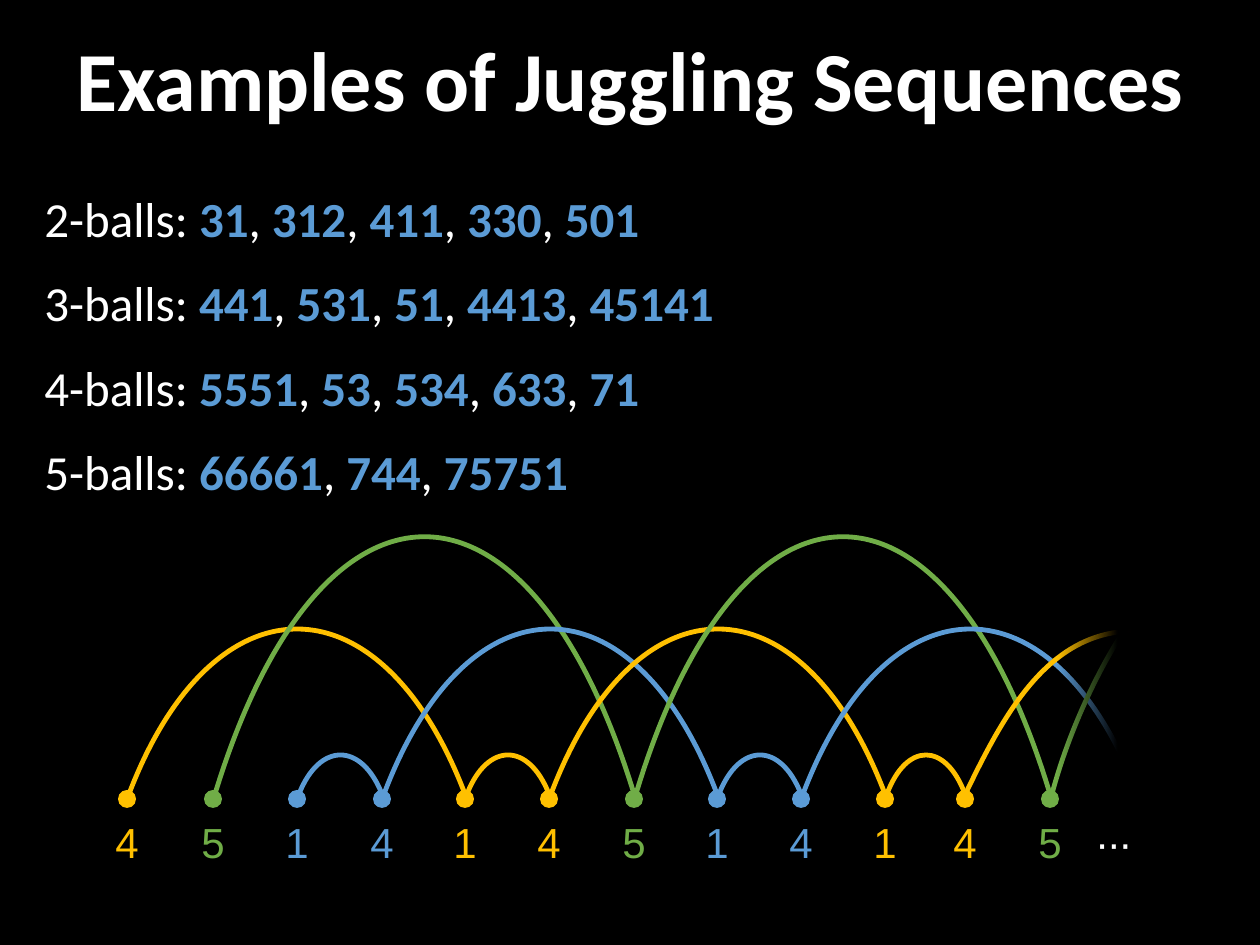
"""Builds a slide of juggling sequences with an arc diagram of the pattern 45141."""
from lxml.etree import SubElement
from pptx import Presentation
from pptx.dml.color import RGBColor
from pptx.enum.shapes import MSO_SHAPE as Shape
from pptx.enum.text import MSO_ANCHOR as Anchor, MSO_AUTO_SIZE as AutoSize, PP_ALIGN as Align
from pptx.oxml.ns import qn
from pptx.util import Pt

SCALE = 914400 / 126
BLACK = RGBColor(0x00, 0x00, 0x00)
WHITE = RGBColor(0xFF, 0xFF, 0xFF)
YELLOW = RGBColor(0xFF, 0xC0, 0x00)
GREEN = RGBColor(0x70, 0xAD, 0x47)
BLUE = RGBColor(0x5B, 0x9B, 0xD5)

EXAMPLES = {
    "2-balls: ": ["31", "312", "411", "330", "501"],
    "3-balls: ": ["441", "531", "51", "4413", "45141"],
    "4-balls: ": ["5551", "53", "534", "633", "71"],
    "5-balls: ": ["66661", "744", "75751"],
}
THROWS = [4, 5, 1, 4, 1, 4, 5, 1, 4, 1, 4, 5]
BEAT_X = [127, 213, 297, 382, 465, 549, 634, 717, 801, 885, 965, 1050, 1138]
CONTROL_Y = {1: 742, 4: 574, 5: 451}
CUT_ARCS = {
    10: [(965, 795), (1004, 714), (1047, 634), (1131, 631)],
    11: [(1052, 794), (1072, 719), (1111, 644), (1140, 609)],
}
ARC_BASE, DOT_Y, DOT_SIZE, LABEL_TOP = 794, 799, 18, 810


def px(*lengths):
    """Turn pixel lengths into EMU."""
    return [round(length * SCALE) for length in lengths]


def set_values(target, values):
    """Set each named attribute on the target."""
    for name, value in values.items():
        setattr(target, name, value)


def add_span(para, text, size, color, font="Calibri", bold=False):
    """Append a formatted run to a paragraph."""
    span = para.add_run()
    span.text = text
    set_values(span.font, {"name": font, "size": Pt(size), "bold": bold})
    span.font.color.rgb = color


def add_title(page, text):
    """Place and format the title."""
    title = page.shapes.title
    set_values(title, dict(zip(("left", "top", "width", "height"), px(32, 21, 1197, 126))))
    title.text_frame.vertical_anchor = Anchor.MIDDLE
    para = title.text_frame.paragraphs[0]
    set_values(para, {"alignment": Align.CENTER, "line_spacing": 0.9})
    add_span(para, text, 48, WHITE, bold=True)


def add_examples(page):
    """List the sequences for each number of balls."""
    frame = page.shapes.add_textbox(*px(32, 189, 1197, 399)).text_frame
    frame.word_wrap = True
    for index, (heading, sequences) in enumerate(EXAMPLES.items()):
        para = frame.add_paragraph() if index else frame.paragraphs[0]
        set_values(para, {"line_spacing": 0.9, "space_after": Pt(18)})
        add_span(para, heading, 28, WHITE)
        for place, sequence in enumerate(sequences):
            if place:
                add_span(para, ", ", 28, WHITE)
            add_span(para, sequence, 28, BLUE, bold=True)


def bezier_point(points, t):
    """Return the point at t on a cubic curve."""
    weights = ((1 - t) ** 3, 3 * t * (1 - t) ** 2, 3 * t * t * (1 - t), t ** 3)
    return tuple(sum(w * p[axis] for w, p in zip(weights, points)) for axis in (0, 1))


def add_curve(page, points, color):
    """Draw a cubic curve in a freeform that bounds it."""
    outline = [px(*bezier_point(points, step / 24)) for step in range(25)]
    builder = page.shapes.build_freeform(*outline[0])
    builder.add_line_segments(outline[1:], close=False)
    curve = builder.convert_to_shape()
    drawing = next(curve.element.iter(qn("a:path")))
    for segment in drawing.findall(qn("a:lnTo")):
        drawing.remove(segment)
    cubic = SubElement(drawing, qn("a:cubicBezTo"))
    for point in points[1:]:
        x, y = px(*point)
        SubElement(cubic, qn("a:pt"), x=str(x - curve.left), y=str(y - curve.top))
    curve.fill.background()
    curve.line.color.rgb = color
    curve.line.width = Pt(2.75)
    curve.shadow.inherit = False


def arc_points(beat):
    """Return the curve of a throw from its beat to its landing."""
    if beat in CUT_ARCS:
        return CUT_ARCS[beat]
    throw = THROWS[beat]
    start, end = BEAT_X[beat] + 2, BEAT_X[beat + throw]
    quarter = (end - start) / 4
    top = CONTROL_Y[throw]
    return [(start, ARC_BASE), (start + quarter, top), (end - quarter, top), (end, ARC_BASE)]


def add_dot(page, x, color):
    """Mark a beat."""
    half = DOT_SIZE / 2
    dot = page.shapes.add_shape(Shape.OVAL, *px(x - half, DOT_Y - half, DOT_SIZE, DOT_SIZE))
    dot.fill.solid()
    dot.fill.fore_color.rgb = color
    dot.line.fill.background()
    dot.shadow.inherit = False


def add_label(page, x, text, color, width=49):
    """Write a label centred under a point."""
    frame = page.shapes.add_textbox(*px(x - width / 2, LABEL_TOP, width, 63)).text_frame
    set_values(frame, {"word_wrap": False, "auto_size": AutoSize.SHAPE_TO_FIT_TEXT})
    para = frame.paragraphs[0]
    para.alignment = Align.CENTER
    add_span(para, text, 24, color, font="Arial")


def add_fade(page):
    """Fade the cut arcs into the background."""
    fade = page.shapes.add_shape(Shape.RECTANGLE, *px(1058, 501, 251, 318))
    fade.fill.gradient()
    fade.fill.gradient_angle = 0
    for stop, position in zip(fade.fill.gradient_stops, (0, 0.24)):
        stop.position = position
        stop.color.rgb = BLACK
    first_color = next(fade.element.iter(qn("a:srgbClr")))
    SubElement(first_color, qn("a:alpha"), val="0")
    fade.line.fill.background()
    fade.shadow.inherit = False


def ball_colors():
    """Follow each ball from throw to throw to colour the beats."""
    colors = {0: YELLOW, 1: GREEN, 2: BLUE}
    for beat, throw in enumerate(THROWS):
        colors[beat + throw] = colors[beat]
    return colors


def add_diagram(page):
    """Draw the arcs, beats and throw numbers."""
    colors = ball_colors()
    for beat in range(len(THROWS)):
        add_curve(page, arc_points(beat), colors[beat])
    for beat in range(len(THROWS)):
        add_dot(page, BEAT_X[beat], colors[beat])
    add_fade(page)
    for beat, throw in enumerate(THROWS):
        add_label(page, BEAT_X[beat], str(throw), colors[beat])
    add_label(page, 1114, "∙∙∙", WHITE, width=60)


def main():
    """Build and save the deck."""
    deck = Presentation()
    deck.slide_width, deck.slide_height = px(1260, 945)
    page = deck.slides.add_slide(deck.slide_layouts[5])
    page.background.fill.solid()
    page.background.fill.fore_color.rgb = BLACK
    add_title(page, "Examples of Juggling Sequences")
    add_examples(page)
    add_diagram(page)
    deck.save("out.pptx")


if __name__ == "__main__":
    main()
